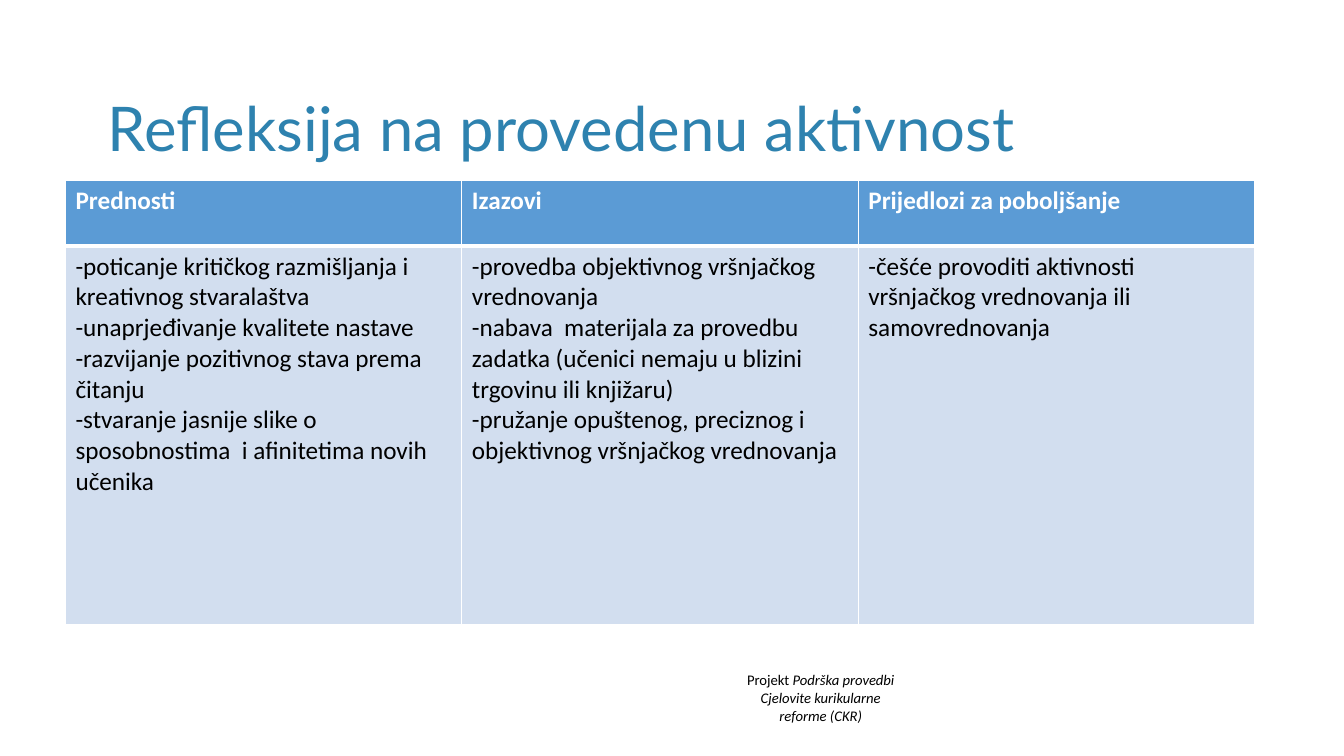
from dataclasses import dataclass

from lxml import etree
from pptx import Presentation
from pptx import util as u
from pptx.dml.color import RGBColor
from pptx.enum import text as t
from pptx.oxml import ns


@dataclass(frozen=True)
class Theme:
    title_font: str = "Lato"
    body_font: str = "Calibri"
    title_color: str = "2E82AF"
    text_color: str = "000000"
    white: str = "FFFFFF"
    header_fill: str = "5B9BD5"
    body_fill: str = "D2DEEF"
    title_size: float = 44
    table_size: float = 18
    footer_size: float = 10.5


theme = Theme()


def add_text(paragraph, words, size=theme.table_size, color=theme.text_color,
             font=theme.body_font, bold=False, italic=False, bullet=None):
    if bullet:
        properties = paragraph._p.get_or_add_pPr()
        properties.set("marL", "0")
        properties.set("indent", "0")
        etree.SubElement(properties, ns.qn("a:buFont"), typeface=font)
        etree.SubElement(properties, ns.qn("a:buChar"), char=bullet)
    for number, line in enumerate(words.split("\n")):
        if number:
            paragraph.add_line_break()
        run = paragraph.add_run()
        run.text = line
        run.font.size = u.Pt(size)
        run.font.name = font
        run.font.bold = bold
        run.font.italic = italic
        run.font.color.rgb = RGBColor.from_string(color)


def format_cell(cell, fill, edges):
    cell.fill.solid()
    cell.fill.fore_color.rgb = RGBColor.from_string(fill)
    properties = cell._tc.get_or_add_tcPr()
    for position, (edge, width) in enumerate(edges.items()):
        line = etree.Element(ns.qn(f"a:ln{edge}"), w=str(u.Pt(width)))
        solid = etree.SubElement(line, ns.qn("a:solidFill"))
        etree.SubElement(solid, ns.qn("a:srgbClr"), val=theme.white)
        properties.insert(position, line)


presentation = Presentation()
presentation.slide_width = u.Cm(33.87)
presentation.slide_height = u.Cm(19.05)
slide = presentation.slides.add_slide(presentation.slide_layouts[5])

footer = slide.shapes.add_textbox(u.Cm(17.75), u.Cm(16.79), u.Cm(5.87), u.Cm(1.6))
footer_frame = footer.text_frame
footer_frame.word_wrap = True
first_line = footer_frame.paragraphs[0]
add_text(first_line, "Projekt ", size=theme.footer_size)
add_text(first_line, "Podrška provedbi", size=theme.footer_size, italic=True)
add_text(footer_frame.add_paragraph(), "Cjelovite kurikularne\nreforme (CKR)",
         size=theme.footer_size, italic=True)
for paragraph in footer_frame.paragraphs:
    paragraph.alignment = t.PP_ALIGN.CENTER

title = slide.shapes.title
title.left, title.top, title.width, title.height = u.Cm(2.46), u.Cm(1.47), u.Cm(29.21), u.Cm(3.68)
title.text_frame.vertical_anchor = t.MSO_ANCHOR.MIDDLE
title_paragraph = title.text_frame.paragraphs[0]
title_paragraph.alignment = t.PP_ALIGN.LEFT
title_paragraph.line_spacing = 0.9
add_text(title_paragraph, "Refleksija na provedenu aktivnost", size=theme.title_size,
         color=theme.title_color, font=theme.title_font)

columns = [
    ("Prednosti", "-", [
        "poticanje kritičkog razmišljanja i kreativnog stvaralaštva",
        "unaprjeđivanje kvalitete nastave",
        "razvijanje pozitivnog stava prema čitanju",
        "stvaranje jasnije slike o sposobnostima  i afinitetima novih učenika",
    ]),
    ("Izazovi", "-", [
        "provedba objektivnog vršnjačkog vrednovanja",
        "nabava  materijala za provedbu zadatka (učenici nemaju u blizini trgovinu ili knjižaru)",
        "pružanje opuštenog, preciznog i objektivnog vršnjačkog vrednovanja",
    ]),
    ("Prijedlozi za poboljšanje", None, [
        "-češće provoditi aktivnosti vršnjačkog vrednovanja ili samovrednovanja",
    ]),
]

row_heights = [u.Cm(1.65), u.Cm(9.55)]
table = slide.shapes.add_table(2, len(columns), u.Cm(1.65), u.Cm(4.55),
                               u.Cm(29.97), sum(row_heights)).table
for row, height in zip(table.rows, row_heights):
    row.height = height

for index, (heading, bullet, points) in enumerate(columns):
    table.columns[index].width = u.Cm(9.99)
    header, body = table.cell(0, index), table.cell(1, index)
    format_cell(header, theme.header_fill, {"L": 1, "R": 1, "T": 1, "B": 3})
    format_cell(body, theme.body_fill, {"L": 1, "R": 1, "T": 3, "B": 1})
    add_text(header.text_frame.paragraphs[0], heading, color=theme.white, bold=True)
    for number, point in enumerate(points):
        frame = body.text_frame
        paragraph = frame.add_paragraph() if number else frame.paragraphs[0]
        add_text(paragraph, point, bullet=bullet)

presentation.save("out.pptx")
